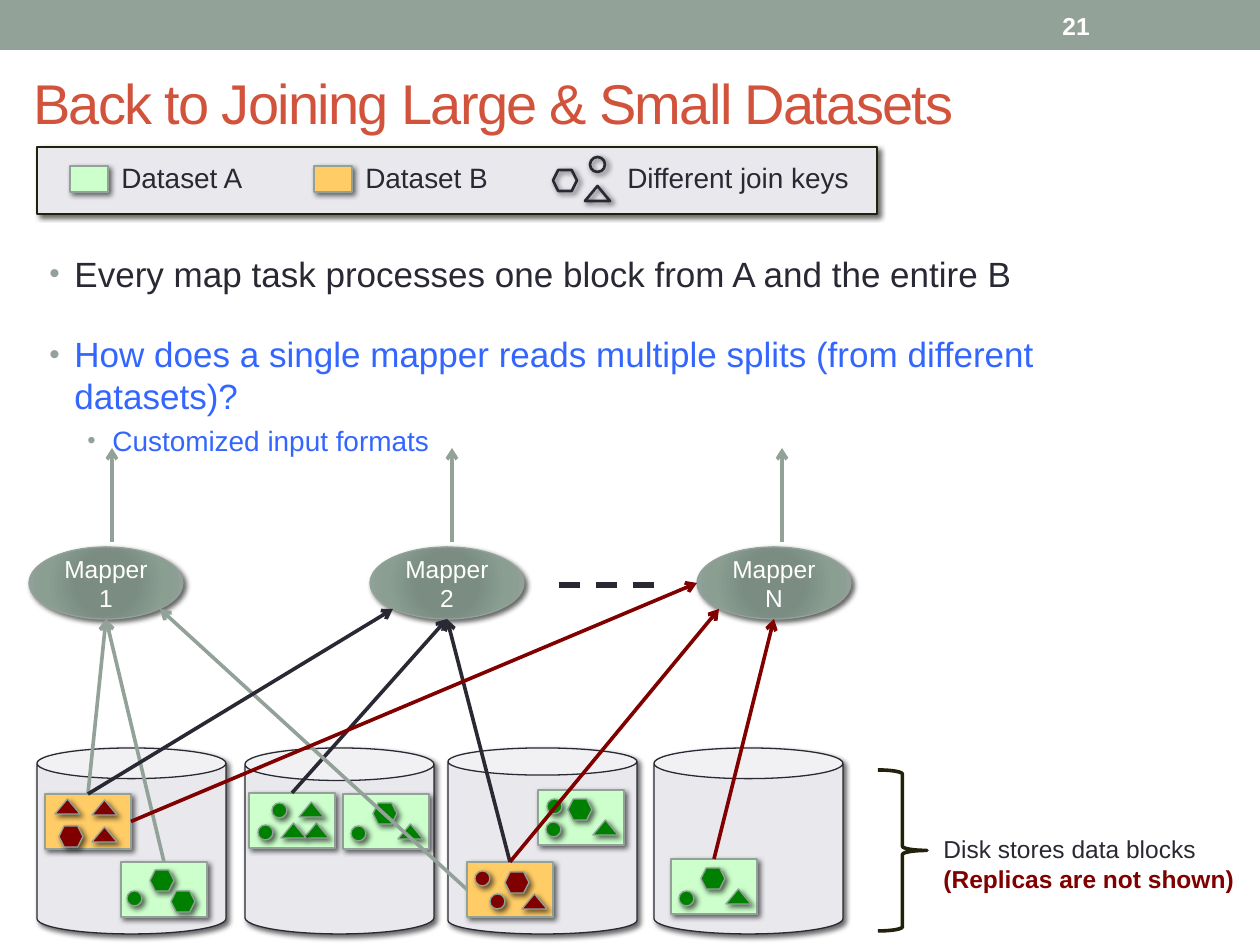
import pptx
import pptx.util
import pptx.dml.color
import pptx.oxml
import pptx.oxml.ns
from pptx.enum.dml import MSO_LINE
from pptx.enum.shapes import MSO_CONNECTOR, MSO_SHAPE
from pptx.enum.text import MSO_ANCHOR, PP_ALIGN

PX = 914400 / 126
NS = pptx.oxml.ns.nsdecls("a")
SAGE, INK, RED, GREEN = "93A299", "292934", "800000", "008000"
MINT, GOLD, PALE, EDGE = "CCFFCC", "FFCC66", "E8E8ED", "22210C"
SHADOW = (f'<a:outerShdw {NS} blurRad="38100" dist="25400" dir="2700000">'
          '<a:srgbClr val="000000"><a:alpha val="60000"/></a:srgbClr></a:outerShdw>')

rgb = pptx.dml.color.RGBColor.from_string
deck = pptx.Presentation()
deck.slide_width = pptx.util.Inches(10)
deck.slide_height = pptx.util.Inches(7.5)
slide = deck.slides.add_slide(deck.slide_layouts[6])


def draw(kind, x, y, w, h, fill=None, line=SAGE, width=0.75, shade=True):
    shape = slide.shapes.add_shape(kind, *[round(v * PX) for v in (x, y, w, h)])
    shape.shadow.inherit = False
    if shade:
        glow = shape._element.spPr.find(pptx.oxml.ns.qn("a:effectLst"))
        glow.append(pptx.oxml.parse_xml(SHADOW))
    if fill:
        shape.fill.solid()
        shape.fill.fore_color.rgb = rgb(fill)
    else:
        shape.fill.background()
    if line:
        shape.line.color.rgb = rgb(line)
        shape.line.width = pptx.util.Pt(width)
    else:
        shape.line.fill.background()
    return shape


def write(text, x, y, w, h, size, color=INK, wrap=False):
    box = slide.shapes.add_textbox(*[round(v * PX) for v in (x, y, w, h)])
    frame = box.text_frame
    frame.text = text
    frame.word_wrap = wrap
    for para in frame.paragraphs:
        font = para.runs[0].font
        font.name, font.size = "Arial", pptx.util.Pt(size)
        font.color.rgb = rgb(color)
    return frame


# Header, title and legend panel
draw(MSO_SHAPE.RECTANGLE, 0, 0, 1260, 50, SAGE, None, shade=False)
draw(MSO_SHAPE.RECTANGLE, 37, 147, 840, 67, PALE, EDGE, 1)
title = write("Back to Joining Large & Small Datasets", 21, 68, 1200, 69, 32, "D2533C", True)
title.vertical_anchor = MSO_ANCHOR.MIDDLE
title.paragraphs[0].runs[0].font._element.set("spc", "-100")
page = write("21", 1050, 3, 147, 45, 14, "FFFFFF", True)
page.vertical_anchor = MSO_ANCHOR.MIDDLE
page.paragraphs[0].runs[0].font.bold = True

# Storage nodes
for x, lid in ((37, 0.165), (245, 0.175), (448, 0.146), (654, 0.165)):
    can = draw(MSO_SHAPE.CAN, x, 748, 189, 186, PALE, INK)
    can.adjustments[0] = lid

# Data blocks with their join keys, placed relative to the block
KEYS = {"tri": (MSO_SHAPE.ISOSCELES_TRIANGLE, 25, 15),
        "hex": (MSO_SHAPE.HEXAGON, 24, 21),
        "dot": (MSO_SHAPE.OVAL, 15, 15)}
trio = [("tri", 55, 30), ("hex", 30, 9), ("dot", 8, 32)]
plan = {
    "B3": (467, 862, [("dot", 23, 32), ("tri", 55, 32), ("hex", 38, 10), ("dot", 8, 9)]),
    "B1": (45, 794, [("tri", 10, 5), ("hex", 14, 32), ("tri", 47, 6), ("tri", 47, 33)]),
    "A4": (671, 859, trio),
    "A2b": (343, 794, trio),
    "A3": (538, 790, trio + [("dot", 9, 9)]),
    "A2a": (249, 793, [("tri", 55, 30), ("dot", 9, 32), ("tri", 50, 9),
                       ("tri", 32, 30), ("dot", 23, 10)]),
    "A1": (121, 862, [("hex", 29, 8), ("dot", 6, 29), ("hex", 50, 29)]),
}
blocks = {}
for name, (x, y, marks) in plan.items():
    fill, tint = (GOLD, RED) if name[0] == "B" else (MINT, GREEN)
    blocks[name] = draw(MSO_SHAPE.RECTANGLE, x, y, 86, 55, fill)
    for key, dx, dy in marks:
        kind, w, h = KEYS[key]
        draw(kind, x + dx, y + dy, w, h, tint)

# Legend entries
for x, fill, text in ((70, MINT, "Dataset A"), (314, GOLD, "Dataset B")):
    draw(MSO_SHAPE.RECTANGLE, x, 166, 38, 26, fill)
    write(text, x + 39, 154, 150, 47, 16)
for key, x, y in (("tri", 585, 186), ("hex", 553, 170), ("dot", 590, 157)):
    kind, w, h = KEYS[key]
    draw(kind, x, y, w, h, None, INK, 1.5)
write("Different join keys", 615, 154, 249, 47, 16)

# Storage note
note = write("Disk stores data blocks\n(Replicas are not shown)", 931, 828, 319, 72, 14)
last = note.paragraphs[1].runs[0].font
last.bold = True
last.color.rgb = rgb(RED)
draw(MSO_SHAPE.RIGHT_BRACE, 878, 770, 49, 161, None, EDGE, 2.08, shade=False)

# Mappers
stops = ((0, "7B8E82"), (34, "7B8D83"), (70, "8A9E92"), (100, SAGE))
grad = "".join(f'<a:gs pos="{p * 1000}"><a:srgbClr val="{c}"/></a:gs>' for p, c in stops)
for x, text in ((697, "Mapper N"), (29, "Mapper 1"), (370, "Mapper 2")):
    oval = draw(MSO_SHAPE.OVAL, x, 547, 154, 72, SAGE)
    props = oval._element.spPr
    props.replace(props.find(pptx.oxml.ns.qn("a:solidFill")), pptx.oxml.parse_xml(
        f'<a:gradFill {NS} rotWithShape="1"><a:gsLst>{grad}</a:gsLst><a:path path="circle">'
        '<a:fillToRect l="100000" t="100000" r="100000" b="100000"/></a:path></a:gradFill>'))
    frame = oval.text_frame
    frame.text = text
    frame.word_wrap = True
    frame.vertical_anchor = MSO_ANCHOR.MIDDLE
    para = frame.paragraphs[0]
    para.alignment = PP_ALIGN.CENTER
    font = para.runs[0].font
    font.name, font.size = "Arial", pptx.util.Pt(14)
    font.color.rgb = rgb("FFFFFF")

# Links: start point or (block, side), end point, colour
links = [
    (("B1", 0), (106, 619), SAGE), (("A1", 0), (106, 619), SAGE),
    (("A2a", 0), (447, 619), INK), ((559, 585), (659, 585), INK),
    ((452, 542), (452, 448), SAGE), ((112, 542), (112, 448), SAGE),
    ((782, 542), (782, 448), SAGE),
    (("B3", 1), (160, 609), SAGE), (("B1", 0), (393, 609), INK),
    (("B3", 0), (447, 619), INK), (("A4", 0), (774, 619), RED),
    (("B3", 0), (719, 609), RED), (("B1", 3), (697, 583), RED),
]
for start, end, color in links:
    bound = start[0] in blocks
    ends = (end if bound else start) + end
    link = slide.shapes.add_connector(MSO_CONNECTOR.STRAIGHT, *[round(v * PX) for v in ends])
    if bound:
        link.begin_connect(blocks[start[0]], start[1])
    link.line.color.rgb = rgb(color)
    link.line.width = pptx.util.Pt(2.08)
    if start[1] == end[1]:
        link.line.width = pptx.util.Pt(3)
        link.line.dash_style = MSO_LINE.DASH
    else:
        link.line._get_or_add_ln().append(pptx.oxml.parse_xml(f'<a:tailEnd {NS} type="arrow"/>'))
    link._element.spPr.append(pptx.oxml.parse_xml(f"<a:effectLst {NS}/>"))

# Body text: size, colour, space before, left margin in px
points = [
    ("Every map task processes one block from A and the entire B", 20, INK, 1, 25),
    ("How does a single mapper reads multiple splits (from different datasets)?",
     20, "3366FF", 22, 25),
    ("Customized input formats", 16, "3366FF", 4, 63),
]
body = write("\n".join(p[0] for p in points), 37, 246, 1150, 202, 20, INK, True)
for para, (text, size, color, gap, left) in zip(body.paragraphs, points):
    para.space_before = pptx.util.Pt(gap)
    font = para.runs[0].font
    font.size = pptx.util.Pt(size)
    font.color.rgb = rgb(color)
    props = para._p.get_or_add_pPr()
    props.set("marL", str(round(left * PX)))
    props.set("indent", str(round(-25 * PX)))
    for tag in (f'<a:buClr {NS}><a:srgbClr val="{SAGE}"/></a:buClr>',
                f'<a:buSzPct {NS} val="85000"/>',
                f'<a:buFont {NS} typeface="Arial"/>', f'<a:buChar {NS} char="•"/>'):
        props.append(pptx.oxml.parse_xml(tag))

deck.save("out.pptx")
